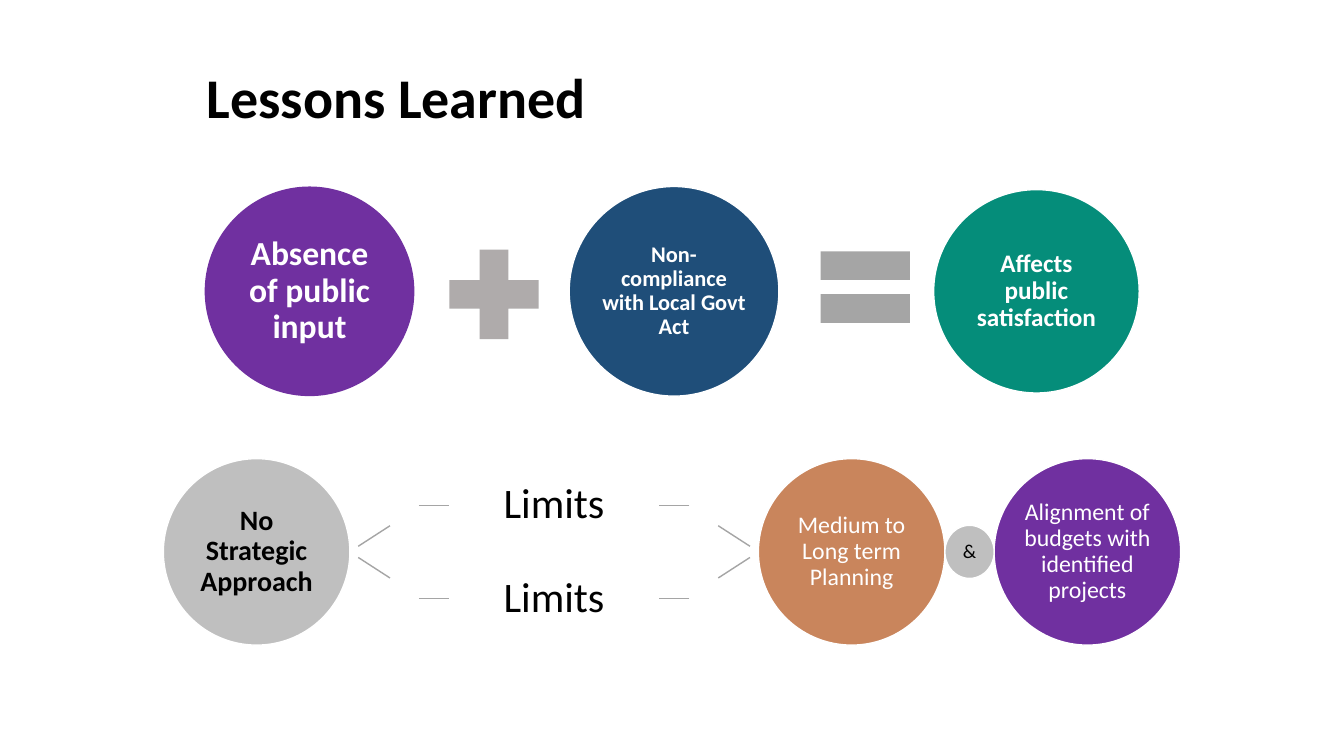
from lxml.etree import SubElement
from pptx import Presentation
from pptx.dml.color import RGBColor
from pptx.enum.shapes import MSO_CONNECTOR, MSO_SHAPE as Shape
from pptx.enum.text import MSO_ANCHOR as Anchor, PP_ALIGN as Align
from pptx.oxml.ns import qn
from pptx.util import Inches, Pt

WHITE = RGBColor(0xFF, 0xFF, 0xFF)
BLACK = RGBColor(0x00, 0x00, 0x00)
PURPLE = RGBColor(0x70, 0x30, 0xA0)
NAVY = RGBColor(0x1F, 0x4E, 0x79)
TEAL = RGBColor(0x05, 0x8D, 0x7A)
COPPER = RGBColor(0xC9, 0x85, 0x5C)
SILVER = RGBColor(0xBF, 0xBF, 0xBF)
GRAY = RGBColor(0xA5, 0xA5, 0xA5)
WARM = RGBColor(0xAF, 0xAB, 0xAB)


def write(shape, text, size, color, bold=False, inset=0.0,
          align=Align.CENTER, anchor=Anchor.MIDDLE):
    frame = shape.text_frame
    frame.word_wrap = True
    frame.vertical_anchor = anchor
    frame.margin_left = frame.margin_right = Inches(inset)
    frame.margin_top = frame.margin_bottom = Inches(inset)
    para = frame.paragraphs[0]
    para.text = text
    para.alignment = align
    para.line_spacing = 0.9
    font = para.font
    font.name, font.size, font.bold = "Calibri", Pt(size), bold
    font.color.rgb = color


def add_form(slide, kind, box, fill, edge=None):
    form = slide.shapes.add_shape(kind, *map(Inches, box))
    form.shadow.inherit = False
    form.fill.solid()
    form.fill.fore_color.rgb = fill
    if edge is None:
        form.line.fill.background()
    else:
        form.line.color.rgb = edge
        form.line.width = Pt(1)
    return form


def add_disc(slide, box, fill, text, size, color=WHITE, bold=False,
             inset=0.0, edge=WHITE):
    disc = add_form(slide, Shape.OVAL, box, fill, edge)
    write(disc, text, size, color, bold, inset)


def add_line(slide, x1, y1, x2, y2):
    line = slide.shapes.add_connector(
        MSO_CONNECTOR.STRAIGHT, *map(Inches, (x1, y1, x2, y2)))
    line.line.color.rgb = GRAY
    line.line.width = Pt(1)
    SubElement(line._element.spPr, qn("a:effectLst"))
    return line


def add_title(slide, left, top, width, height):
    title = slide.shapes.title
    title.left, title.top = Inches(left), Inches(top)
    title.width, title.height = Inches(width), Inches(height)
    write(title, "Lessons Learned", 40, BLACK, True, 0.1,
          Align.LEFT, Anchor.BOTTOM)
    title.text_frame.margin_top = title.text_frame.margin_bottom = Inches(0.05)


def add_sum(slide, left, top, width, height):
    """Row of three discs joined by a plus and an equals sign."""
    step = 0.39 * width
    discs = [
        ("Absence of public input", 24, PURPLE, 1, 1, 0.03, None),
        ("Non- compliance with Local Govt Act", 16, NAVY, 1, 1, 0.02, WHITE),
        ("Affects public satisfaction", 18, TEAL, 0.98, 0.97, 0.03, WHITE),
    ]
    for i, (text, size, fill, wide, high, inset, edge) in enumerate(discs):
        box = (left + i * step, top + (1 - high) * height / 2,
               wide * height, high * height)
        add_disc(slide, box, fill, text, size, WHITE, True, inset, edge)

    side = 0.58 * height
    signs = [(Shape.MATH_PLUS, 1.09, 0.225, WARM),
             (Shape.MATH_EQUAL, 2.86, 0.19, GRAY)]
    for kind, x, y, fill in signs:
        add_form(slide, kind,
                 (left + x * height, top + y * height, side, side), fill)


def add_limits(slide, left, top, width, height):
    """Cause disc, two branches of limits, and the two discs they lead to."""
    last = left + width - height
    goal = left + 3.19 * height
    discs = [
        (left, "No Strategic Approach", 20, SILVER, BLACK, True),
        (goal, "Medium to Long term Planning", 17, COPPER, WHITE, False),
        (last, "Alignment of budgets with identified projects", 17, PURPLE,
         WHITE, False),
    ]
    for x, text, size, fill, color, bold in discs:
        add_disc(slide, (x, top, height, height), fill, text, size, color, bold)

    center = top + height / 2
    joint = goal + height
    high = 0.285 * height
    add_disc(slide, (joint, center - high / 2, last - joint, high),
             SILVER, "&", 14, BLACK)

    mid = (left + joint) / 2
    half = 0.565 * height
    stub = 0.16 * height
    for turn in (-1, 1):
        y = center + turn * height / 4
        label = slide.shapes.add_textbox(
            *map(Inches, (mid - half, y - height / 4, 2 * half, height / 2)))
        write(label, "Limits", 30, BLACK, inset=0.23)
        for way, site in ((-1, 1), (1, 3)):
            edge = mid + way * half
            line = add_line(slide, edge + way * stub, y, edge, y)
            line.end_connect(label, site)
            add_line(slide,
                     mid + way * 1.05 * height, center + turn * 0.03 * height,
                     mid + way * 0.88 * height, center + turn * 0.14 * height)


def main():
    deck = Presentation()
    deck.slide_width, deck.slide_height = Inches(13.33), Inches(7.5)
    slide = deck.slides.add_slide(deck.slide_layouts[5])
    add_title(slide, 1.95, 0.4, 8.65, 0.95)
    add_sum(slide, 2.03, 1.85, 9.27, 2.08)
    add_limits(slide, 1.62, 4.55, 10.09, 1.85)
    deck.save("out.pptx")


if __name__ == "__main__":
    main()
